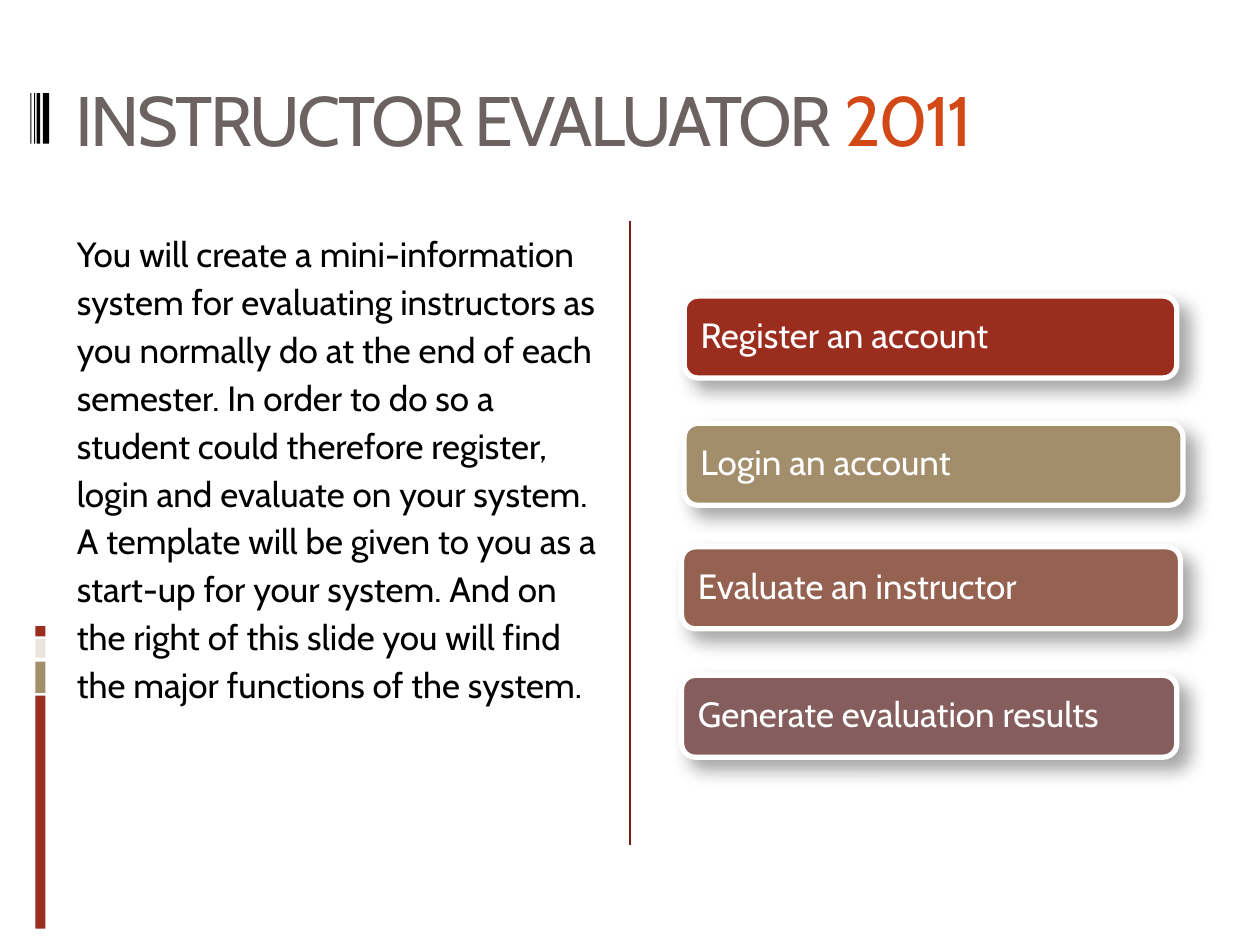
import dataclasses

import pptx
import pptx.dml.color
import pptx.enum.shapes
import pptx.enum.text
import pptx.oxml
import pptx.oxml.ns
import pptx.util

RGBColor = pptx.dml.color.RGBColor
RED = RGBColor(0x9B, 0x2D, 0x1F)
TAN = RGBColor(0xA2, 0x8E, 0x6A)
CREAM = RGBColor(0xE9, 0xE5, 0xDC)
BROWN = RGBColor(0x95, 0x62, 0x51)
MAUVE = RGBColor(0x85, 0x5D, 0x5D)
MAROON = RGBColor(0x75, 0x1D, 0x12)
GRAY = RGBColor(0x6C, 0x62, 0x62)
ORANGE = RGBColor(0xD3, 0x48, 0x17)
BLACK = RGBColor(0x00, 0x00, 0x00)
WHITE = RGBColor(0xFF, 0xFF, 0xFF)

FONT = "Cabin"
COLUMNS, ROWS = 100, 75
CELL = pptx.util.Inches(0.1)
SHAPE = pptx.enum.shapes.MSO_SHAPE
MIDDLE = pptx.enum.text.MSO_ANCHOR.MIDDLE
LEFT = pptx.enum.text.PP_ALIGN.LEFT


@dataclasses.dataclass
class Box:
    left: float
    top: float
    width: float
    height: float

    def inner(self, left, top, width, height):
        return Box(self.left + left, self.top + top, width, height)

    def lengths(self):
        return [round(value * CELL) for value in dataclasses.astuple(self)]


def drawing_element(tag, content="", **attributes):
    listed = " ".join(f'{name}="{value}"' for name, value in attributes.items())
    namespace = pptx.oxml.ns.nsdecls("a")
    return pptx.oxml.parse_xml(f"<a:{tag} {namespace} {listed}>{content}</a:{tag}>")


def add_span(para, text, size, color):
    span = para.add_run()
    span.text = text
    span.font.name = FONT
    span.font.size = pptx.util.Pt(size)
    span.font.color.rgb = color
    return span


def add_block(page, kind, box, color):
    block = page.shapes.add_shape(kind, *box.lengths())
    block.shadow.inherit = False
    block.fill.solid()
    block.fill.fore_color.rgb = color
    block.line.fill.background()
    return block


def fit_placeholder(holder, box):
    holder.left, holder.top, holder.width, holder.height = box.lengths()
    holder.text_frame.word_wrap = True
    holder.text_frame.auto_size = pptx.enum.text.MSO_AUTO_SIZE.NONE
    para = holder.text_frame.paragraphs[0]
    para.alignment = LEFT
    return para


def add_side_bars(page, box):
    for top, height, color in [(0, 0.8, RED), (1, 1.5, CREAM),
                               (2.8, 2.5, TAN), (5.5, 18.5, RED)]:
        add_block(page, SHAPE.RECTANGLE, box.inner(0, top, box.width, height), color)


def add_title_bars(page, box):
    for left, width in [(0, 0.1), (0.3, 0.1), (0.5, 0.3), (1, 0.5)]:
        add_block(page, SHAPE.RECTANGLE, box.inner(left, 0, width, box.height), BLACK)


def add_divider(page, box):
    left, top, width, height = box.lengths()
    line = page.shapes.add_connector(
        pptx.enum.shapes.MSO_CONNECTOR.STRAIGHT, left, top, left + width, top + height)
    line.line.color.rgb = MAROON
    line.line.width = pptx.util.Pt(0.75)
    line._element.spPr.append(drawing_element("effectLst"))


def fill_title(page, box):
    para = fit_placeholder(page.shapes.title, box)
    page.shapes.title.text_frame.vertical_anchor = MIDDLE
    for text, color in [("INSTRUCTOR EVALUATOR ", GRAY), ("2011", ORANGE)]:
        span = add_span(para, text, 40, color)
        span.font._element.set("spc", "-150")


def fill_body(page, box):
    para = fit_placeholder(page.placeholders[1], box)
    para.line_spacing = 1.14
    para.space_before = pptx.util.Pt(7)
    properties = para._p.get_or_add_pPr()
    properties.set("marL", "0")
    properties.set("indent", "0")
    properties.append(drawing_element("buNone"))
    add_span(
        para,
        "You will create a mini-information system for evaluating instructors as you "
        "normally do at the end of each semester. In order to do so a student could "
        "therefore register, login and evaluate on your system. A template will be given "
        "to you as a start-up for your system. And on the right of this slide you will "
        "find the major functions of the system.",
        20, BLACK)


def add_button(page, box, text, color):
    button = add_block(page, SHAPE.ROUNDED_RECTANGLE, box, color)
    button.line.color.rgb = WHITE
    button.line.width = pptx.util.Pt(3)
    effects = button._element.spPr.find(pptx.oxml.ns.qn("a:effectLst"))
    effects.append(drawing_element(
        "outerShdw", '<a:srgbClr val="000000"><a:alpha val="35000"/></a:srgbClr>',
        blurRad=pptx.util.Pt(10.2), dist=pptx.util.Pt(8), dir=45 * 60000,
        algn="tl", rotWithShape=0))
    frame = button.text_frame
    frame.word_wrap = True
    frame.vertical_anchor = MIDDLE
    frame.margin_left = frame.margin_right = pptx.util.Inches(0.1)
    frame.margin_top = frame.margin_bottom = 0
    para = frame.paragraphs[0]
    para.alignment = LEFT
    para.line_spacing = 0.9
    add_span(para, text, 20, WHITE)


def add_functions(page, box):
    for left, top, width, text, color in [
            (0.2, 0, 39.1, "Register an account", RED),
            (0.2, 10.1, 39.6, "Login an account", TAN),
            (0, 19.9, 39.6, "Evaluate an instructor", BROWN),
            (0, 30.1, 39.3, "Generate evaluation results", MAUVE)]:
        add_button(page, box.inner(left, top, width, 6.5), text, color)


def main():
    deck = pptx.Presentation()
    deck.slide_width = COLUMNS * CELL
    deck.slide_height = ROWS * CELL
    page = deck.slides.add_slide(deck.slide_layouts[1])
    add_side_bars(page, Box(2.8, 49.7, 0.8, 24))
    add_title_bars(page, Box(2.4, 7.4, 1.5, 4))
    add_divider(page, Box(50, 17.5, 0, 49.6))
    fill_title(page, Box(5, 2.3, 90, 14.2))
    fill_body(page, Box(5.1, 17.5, 44.2, 49.5))
    add_functions(page, Box(54.1, 23.5, 39.8, 36.6))
    deck.save("out.pptx")


if __name__ == "__main__":
    main()
